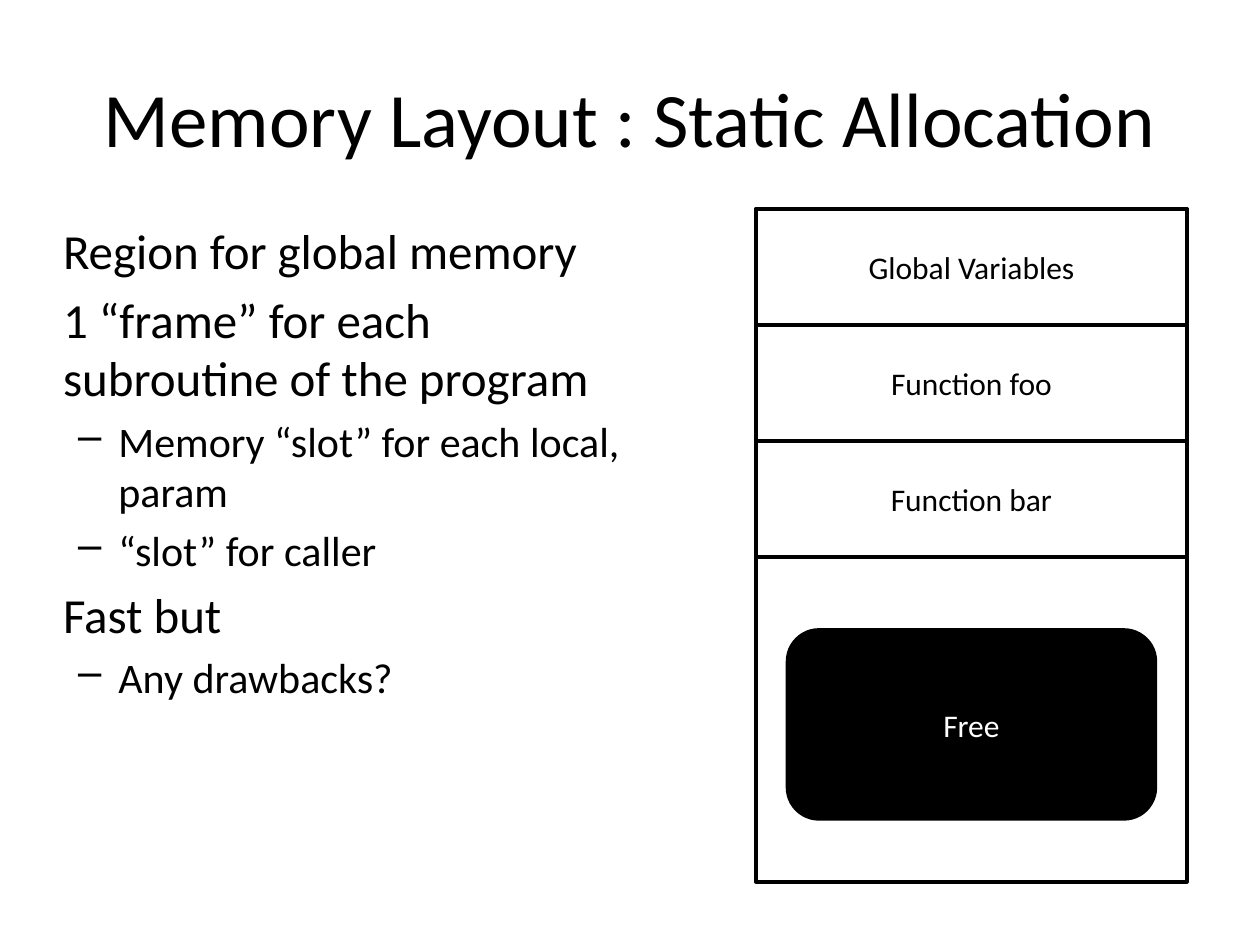
"""Build a slide on the memory layout of static allocation."""
from dataclasses import dataclass

import pptx
import pptx.dml.color
import pptx.enum.shapes
import pptx.enum.text
import pptx.oxml.ns
import pptx.util
from lxml import etree

Inches = pptx.util.Inches
Pt = pptx.util.Pt
Kind = pptx.enum.shapes.MSO_SHAPE
BLACK = pptx.dml.color.RGBColor(0, 0, 0)
WHITE = pptx.dml.color.RGBColor(255, 255, 255)
FONT = "Calibri"
WIDE, HIGH = 10, 7.5
LEFT = 0.05 * WIDE
MAP_X, MAP_Y, MAP_W, MAP_H = 6, 1.66, 3.42, 5.34
ROW = 0.92


@dataclass
class Block:
    """A box in the memory map, in rows from its top."""
    text: str
    row: float
    rows: float
    inset: float = 0
    kind: Kind = Kind.RECTANGLE
    fill: pptx.dml.color.RGBColor = WHITE
    ink: pptx.dml.color.RGBColor = BLACK


@dataclass
class Point:
    """A line of body text and its level."""
    text: str
    level: int = 0


BLOCKS = [
    Block("", 0, MAP_H / ROW),
    Block("Global Variables", 0, 1),
    Block("Function foo", 1, 1),
    Block("Function bar", 2, 1),
    Block("Free", 3.63, 1.63, 0.25, Kind.ROUNDED_RECTANGLE, BLACK, WHITE),
]
POINTS = [
    Point("Region for global memory"),
    Point("1 “frame” for each subroutine of the program"),
    Point("Memory “slot” for each local, param", 1),
    Point("“slot” for caller", 1),
    Point("Fast but"),
    Point("Any drawbacks?", 1),
]


def style(para, size: float, ink: pptx.dml.color.RGBColor = BLACK) -> None:
    """Set the font of each run in a paragraph."""
    for run in para.runs:
        run.font.name = FONT
        run.font.size = Pt(size)
        run.font.color.rgb = ink


def clear_edge(frame) -> None:
    """Take the margins off a text frame and let it wrap."""
    frame.word_wrap = True
    frame.margin_left = frame.margin_right = 0
    frame.margin_top = frame.margin_bottom = 0


def add_title(slide, text: str) -> None:
    """Fill and place the title."""
    title = slide.shapes.title
    title.left, title.top = Inches(LEFT), Inches(0.04 * HIGH)
    title.width, title.height = Inches(0.9 * WIDE), Inches(1.25)
    frame = title.text_frame
    frame.text = text
    clear_edge(frame)
    frame.vertical_anchor = pptx.enum.text.MSO_ANCHOR.MIDDLE
    frame.paragraphs[0].alignment = pptx.enum.text.PP_ALIGN.CENTER
    style(frame.paragraphs[0], 44)


def add_dash(para) -> None:
    """Give a paragraph a hanging dash."""
    props = para._p.get_or_add_pPr()
    props.set("marL", str(Inches(0.44)))
    props.set("indent", str(Inches(-0.32)))
    dash = etree.SubElement(props, pptx.oxml.ns.qn("a:buChar"))
    dash.set("char", "–")


def add_points(slide, points: list[Point]) -> None:
    """Write the body text."""
    box = slide.shapes.add_textbox(
        Inches(LEFT), Inches(1.75), Inches(4.42), Inches(0.66 * HIGH))
    frame = box.text_frame
    clear_edge(frame)
    for i, point in enumerate(points):
        para = frame.add_paragraph() if i else frame.paragraphs[0]
        para.text = point.text
        para.level = point.level
        size = 24 if point.level else 28
        para.space_before = Pt(0.2 * size)
        style(para, size)
        if point.level:
            add_dash(para)


def add_block(slide, block: Block) -> None:
    """Draw one box of the memory map."""
    shape = slide.shapes.add_shape(
        block.kind, Inches(MAP_X + block.inset), Inches(MAP_Y + block.row * ROW),
        Inches(MAP_W - 2 * block.inset), Inches(block.rows * ROW))
    shape.shadow.inherit = False
    shape.fill.solid()
    shape.fill.fore_color.rgb = block.fill
    shape.line.color.rgb = BLACK
    shape.line.width = Pt(2)
    if block.text:
        frame = shape.text_frame
        frame.text = block.text
        frame.vertical_anchor = pptx.enum.text.MSO_ANCHOR.MIDDLE
        frame.paragraphs[0].alignment = pptx.enum.text.PP_ALIGN.CENTER
        style(frame.paragraphs[0], 18, block.ink)


def main() -> None:
    """Build and save the deck."""
    deck = pptx.Presentation()
    deck.slide_width, deck.slide_height = Inches(WIDE), Inches(HIGH)
    slide = deck.slides.add_slide(deck.slide_layouts[5])
    add_title(slide, "Memory Layout : Static Allocation")
    add_points(slide, POINTS)
    for block in BLOCKS:
        add_block(slide, block)
    deck.save("out.pptx")


if __name__ == "__main__":
    main()
